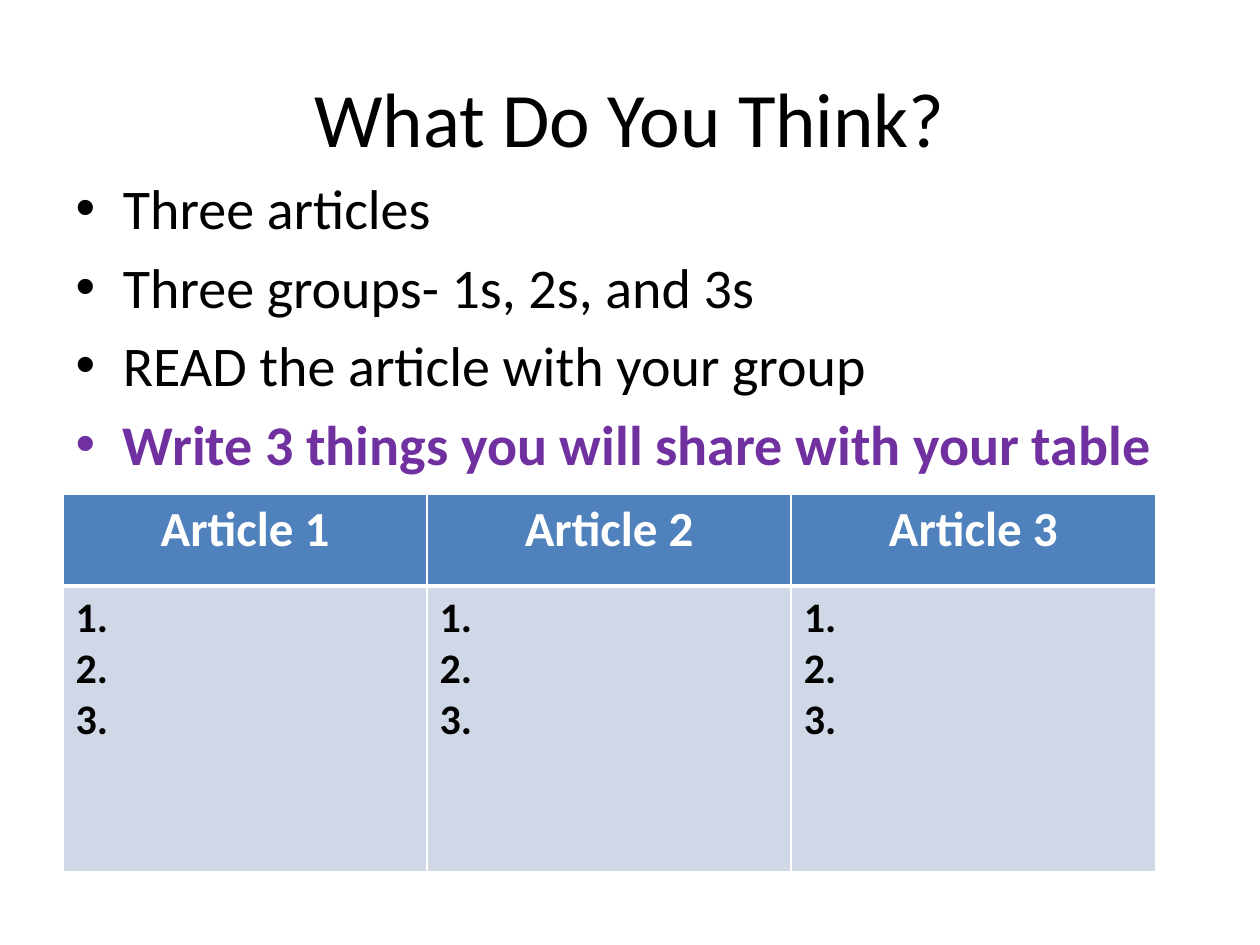
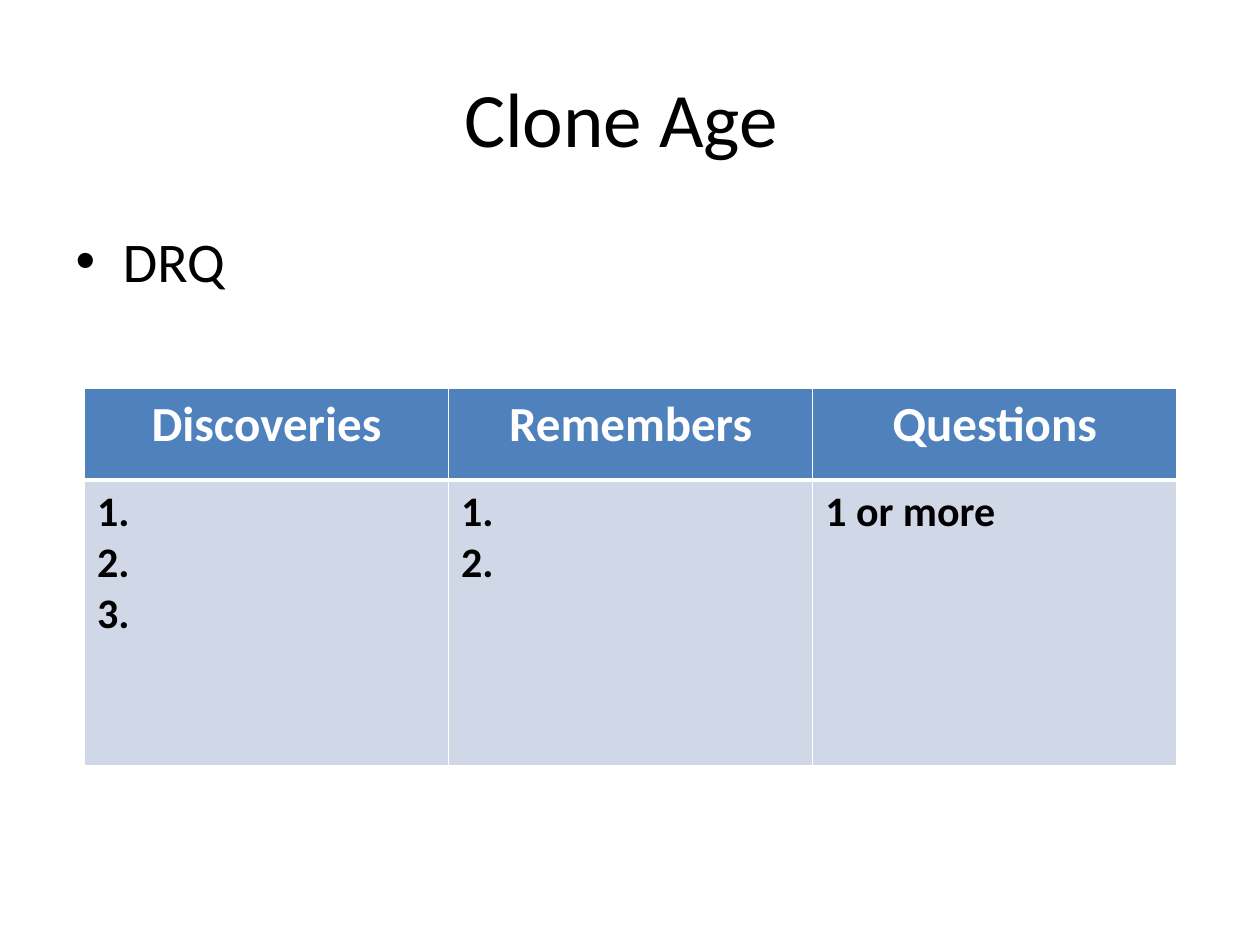
import pptx
import pptx.dml.color
import pptx.enum.text
import pptx.oxml
import pptx.oxml.ns
import pptx.util
from pptx.util import Inches

RGBColor = pptx.dml.color.RGBColor
BLACK = RGBColor(0x00, 0x00, 0x00)
WHITE = RGBColor(0xFF, 0xFF, 0xFF)
PURPLE = RGBColor(0x70, 0x30, 0xA0)
HEADER_BLUE = RGBColor(0x4F, 0x81, 0xBD)
CELL_BLUE = RGBColor(0xD0, 0xD8, 0xE8)

FONT = "Calibri"
TITLE_AND_CONTENT = 1
COLUMN_WIDTH = Inches(2.89)
ROW_HEIGHTS = (Inches(0.73), Inches(2.27))
THIN, THICK = 1, 3
CENTER = pptx.enum.text.PP_ALIGN.CENTER
LEFT = pptx.enum.text.PP_ALIGN.LEFT


class LessonDeck:
    """Holds the presentation, its style and the current slide."""

    def __init__(self):
        self.presentation = pptx.Presentation()
        self.presentation.slide_width = Inches(10)
        self.presentation.slide_height = Inches(7.5)
        self.slide = None

    def new_slide(self, heading):
        layout = self.presentation.slide_layouts[TITLE_AND_CONTENT]
        self.slide = self.presentation.slides.add_slide(layout)
        title = self.slide.shapes.title
        self.place(title, Inches(0.3), Inches(1.25))
        title.text_frame.text = heading
        title.text_frame.vertical_anchor = pptx.enum.text.MSO_ANCHOR.MIDDLE
        self.format_text(title.text_frame, 44, BLACK, align=CENTER)

    def place(self, placeholder, top, height):
        placeholder.left, placeholder.top = Inches(0.5), top
        placeholder.width, placeholder.height = Inches(9), height

    def format_text(self, frame, size, color, bold=False, align=LEFT):
        for paragraph in frame.paragraphs:
            paragraph.alignment = align
            for run in paragraph.runs:
                self.format_run(run, size, color, bold)

    def format_run(self, run, size, color, bold):
        run.font.name = FONT
        run.font.size = pptx.util.Pt(size)
        run.font.bold = bold
        run.font.color.rgb = color

    def bullets(self, items, top, highlighted=None):
        body = self.slide.placeholders[1]
        self.place(body, top, Inches(4.95))
        frame = body.text_frame
        frame.text = "\n".join(items)
        frame.auto_size = pptx.enum.text.MSO_AUTO_SIZE.NONE
        self.format_text(frame, 32, BLACK)
        for paragraph in frame.paragraphs:
            if paragraph.text == highlighted:
                self.format_run(paragraph.runs[0], 32, PURPLE, True)

    def response_table(self, columns, left, top):
        """Draw one column for each heading and its list of prompts."""
        table = self.slide.shapes.add_table(
            2, len(columns), left, top,
            COLUMN_WIDTH * len(columns), sum(ROW_HEIGHTS)).table
        for row, height in zip(table.rows, ROW_HEIGHTS):
            row.height = height
        for index, (heading, prompts) in enumerate(columns.items()):
            table.columns[index].width = COLUMN_WIDTH
            header, answers = table.cell(0, index), table.cell(1, index)
            self.fill_cell(header, heading, HEADER_BLUE, THIN, THICK)
            self.format_text(header.text_frame, 28, WHITE, True, CENTER)
            self.fill_cell(answers, "\n".join(prompts), CELL_BLUE, THICK, THIN)
            self.format_text(answers.text_frame, 24, BLACK, True)

    def fill_cell(self, cell, text, color, top_line, bottom_line):
        cell.text_frame.text = text
        properties = cell._tc.get_or_add_tcPr()
        # Borders come before the fill in the cell's XML
        widths = {"L": THIN, "R": THIN, "T": top_line, "B": bottom_line}
        for side, width in widths.items():
            properties.append(pptx.oxml.parse_xml(
                f'<a:ln{side} {pptx.oxml.ns.nsdecls("a")} '
                f'w="{pptx.util.Pt(width)}"><a:solidFill>'
                f'<a:srgbClr val="{WHITE}"/></a:solidFill></a:ln{side}>'))
        cell.fill.solid()
        cell.fill.fore_color.rgb = color


def numbers(count):
    return [f"{number}." for number in range(1, count + 1)]


def main():
    deck = LessonDeck()

    # Article discussion
    share_task = "Write 3 things you will share with your table"
    deck.new_slide("What Do You Think?")
    deck.bullets(["Three articles", "Three groups- 1s, 2s, and 3s",
                  "READ the article with your group", share_task],
                 Inches(1.33), highlighted=share_task)
    articles = {f"Article {number}": numbers(3) for number in (1, 2, 3)}
    deck.response_table(articles, Inches(0.5), Inches(3.92))

    # Discoveries, remembers and questions
    deck.new_slide("Clone Age ")
    deck.bullets(["DRQ"], Inches(1.75))
    responses = {"Discoveries": numbers(3), "Remembers": numbers(2),
                 "Questions": ["1 or more"]}
    deck.response_table(responses, Inches(0.67), Inches(3.08))

    deck.presentation.save("out.pptx")


if __name__ == "__main__":
    main()
